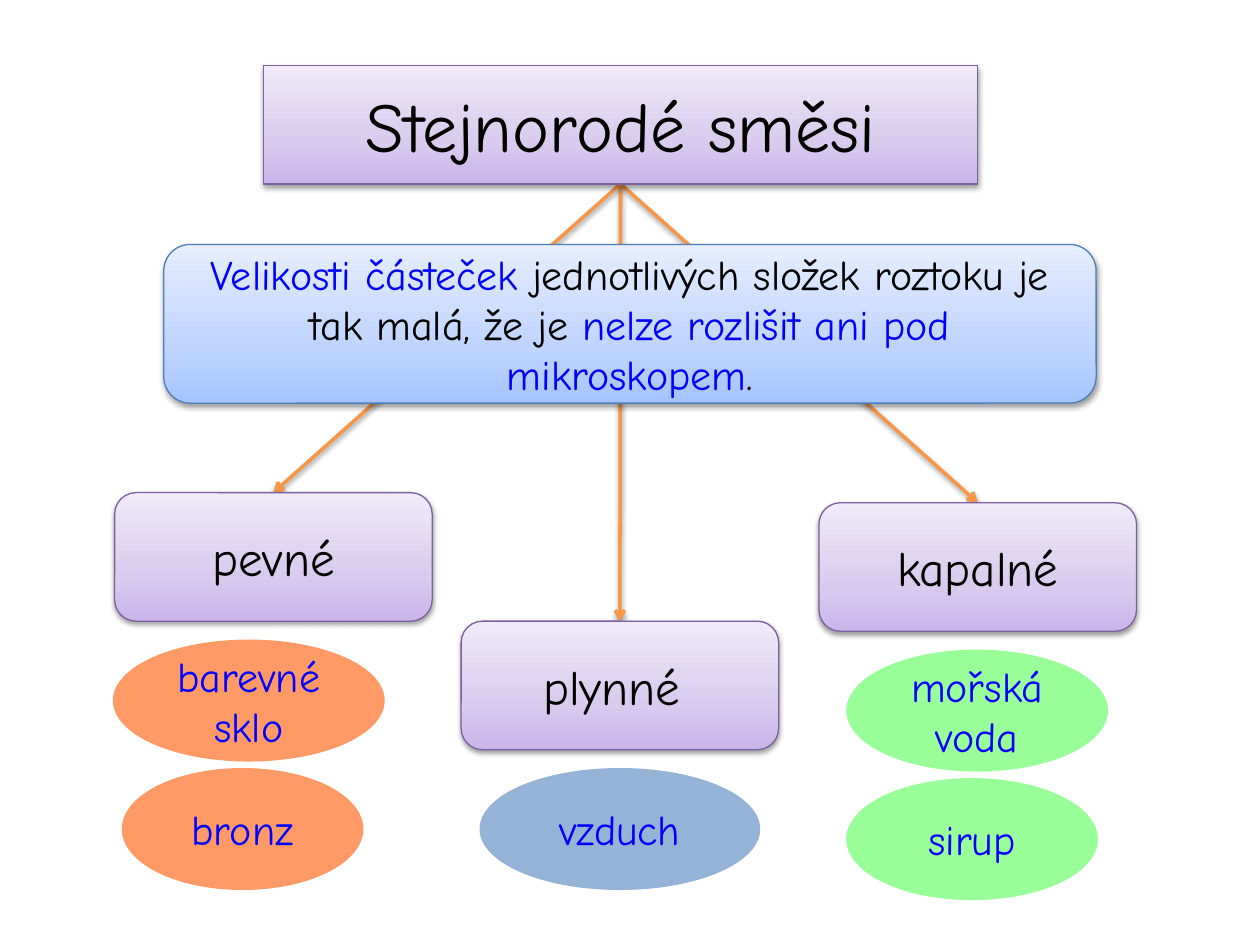
from copy import deepcopy
from typing import NamedTuple

from lxml import etree
from pptx import Presentation
from pptx.dml.color import RGBColor
from pptx.enum import shapes as kinds, text as txt
from pptx.oxml.ns import qn
from pptx.util import Inches, Pt

FONT = "Comic Neue"
BLACK = RGBColor(0x00, 0x00, 0x00)
BLUE = RGBColor(0x00, 0x00, 0xFF)
ORANGE = RGBColor(0xF7, 0x96, 0x46)
SALMON = RGBColor(0xFF, 0x99, 0x66)
STEEL = RGBColor(0x95, 0xB3, 0xD7)
GREEN = RGBColor(0x99, 0xFF, 0x99)
STOPS = (0, 0.35, 1)


class Tone(NamedTuple):
    grad: tuple
    edge: RGBColor


class Run(NamedTuple):
    text: str
    color: RGBColor = BLACK


class Group(NamedTuple):
    name: str
    left: float
    top: float


class Sample(NamedTuple):
    name: str
    left: float
    top: float
    width: float
    color: RGBColor


LILAC = Tone((RGBColor(0xC9, 0xB5, 0xE8), RGBColor(0xD8, 0xCB, 0xEE),
              RGBColor(0xF0, 0xEA, 0xF9)), RGBColor(0x7D, 0x60, 0xA0))
SKY = Tone((RGBColor(0xA4, 0xC4, 0xFF), RGBColor(0xBF, 0xD4, 0xFF),
            RGBColor(0xE6, 0xEE, 0xFF)), RGBColor(0x4B, 0x7E, 0xBC))

NOTE = (
    Run("Velikosti částeček ", BLUE),
    Run("jednotlivých složek roztoku je tak malá, že je "),
    Run("nelze rozlišit ani pod mikroskopem", BLUE),
    Run("."),
)
GROUPS = (
    Group("pevné", 0.91, 3.91),
    Group("plynné ", 3.66, 4.93),
    Group("kapalné", 6.5, 3.99),
)
SAMPLES = (
    Sample("barevné sklo", 0.91, 5.09, 2.13, SALMON),
    Sample("bronz", 0.98, 6.11, 1.89, SALMON),
    Sample("vzduch", 3.82, 6.11, 2.2, STEEL),
    Sample("mořská voda", 6.73, 5.17, 2.05, GREEN),
    Sample("sirup", 6.73, 6.19, 1.97, GREEN),
)


def add_shadow(props) -> None:
    """Give shape properties a soft shadow that falls straight down."""
    effects = props.find(qn("a:effectLst"))
    if effects is None:
        effects = etree.SubElement(props, qn("a:effectLst"))
    outer = etree.SubElement(effects, qn("a:outerShdw"), blurRad=str(Pt(3.1)),
                             dist=str(Pt(1.6)), dir="5400000", rotWithShape="0")
    color = etree.SubElement(outer, qn("a:srgbClr"), val="000000")
    etree.SubElement(color, qn("a:alpha"), val="38000")


def write(shape, runs: tuple, size: float) -> None:
    frame = shape.text_frame
    frame.word_wrap = True
    frame.auto_size = txt.MSO_AUTO_SIZE.NONE
    frame.vertical_anchor = txt.MSO_ANCHOR.MIDDLE
    para = frame.paragraphs[0]
    para.alignment = txt.PP_ALIGN.CENTER
    for part in runs:
        run = para.add_run()
        run.text = part.text
        run.font.name = FONT
        run.font.size = Pt(size)
        run.font.color.rgb = part.color


def paint(shape, tone: Tone) -> None:
    """Apply the three-stop gradient, thin edge and shadow of a box."""
    shape.fill.gradient()
    shape.fill.gradient_angle = 90
    props = shape._element.spPr
    stops = props.find(".//" + qn("a:gsLst"))
    stops.insert(1, deepcopy(stops[0]))
    for stop, place, color in zip(shape.fill.gradient_stops, STOPS, tone.grad):
        stop.position = place
        stop.color.rgb = color
    shape.line.color.rgb = tone.edge
    shape.line.width = Pt(0.75)
    if not shape.is_placeholder:
        shape.shadow.inherit = False
    add_shadow(props)


def add_title(slide, name: str):
    title = slide.shapes.title
    title.left, title.top = Inches(2.09), Inches(0.52)
    title.width, title.height = Inches(5.67), Inches(0.94)
    geom = etree.Element(qn("a:prstGeom"), prst="roundRect")
    etree.SubElement(geom, qn("a:avLst"))
    title._element.spPr.insert(1, geom)
    paint(title, LILAC)
    write(title, (Run(name),), 40)
    return title


def add_box(slide, left: float, top: float, width: float, height: float,
            tone: Tone, runs: tuple, size: float):
    box = slide.shapes.add_shape(
        kinds.MSO_SHAPE.ROUNDED_RECTANGLE,
        Inches(left), Inches(top), Inches(width), Inches(height))
    paint(box, tone)
    write(box, runs, size)
    return box


def add_oval(slide, item: Sample) -> None:
    oval = slide.shapes.add_shape(
        kinds.MSO_SHAPE.OVAL, Inches(item.left), Inches(item.top),
        Inches(item.width), Inches(0.94))
    oval.shadow.inherit = False
    oval.fill.solid()
    oval.fill.fore_color.rgb = item.color
    oval.line.color.rgb = item.color
    oval.line.width = Pt(2)
    write(oval, (Run(item.name, BLUE),), 24)


def add_arrow(slide, start, end) -> None:
    """Link two boxes, bottom to top, behind everything else."""
    arrow = slide.shapes.add_connector(kinds.MSO_CONNECTOR.STRAIGHT, 0, 0, 0, 0)
    arrow.begin_connect(start, 2)
    arrow.end_connect(end, 0)
    arrow.line.color.rgb = ORANGE
    arrow.line.width = Pt(2)
    props = arrow._element.spPr
    etree.SubElement(props.find(qn("a:ln")), qn("a:tailEnd"), type="arrow")
    add_shadow(props)
    slide.shapes._spTree.insert(2, arrow._element)


def main() -> None:
    deck = Presentation()
    deck.slide_width, deck.slide_height = Inches(10), Inches(7.5)
    slide = deck.slides.add_slide(deck.slide_layouts[5])
    title = add_title(slide, "Stejnorodé směsi")
    add_box(slide, 1.3, 1.94, 7.4, 1.26, SKY, NOTE, 24)
    for group in GROUPS:
        box = add_box(slide, group.left, group.top, 2.52, 1.02, LILAC,
                      (Run(group.name),), 28)
        add_arrow(slide, title, box)
    for item in SAMPLES:
        add_oval(slide, item)
    deck.save("out.pptx")


if __name__ == "__main__":
    main()
